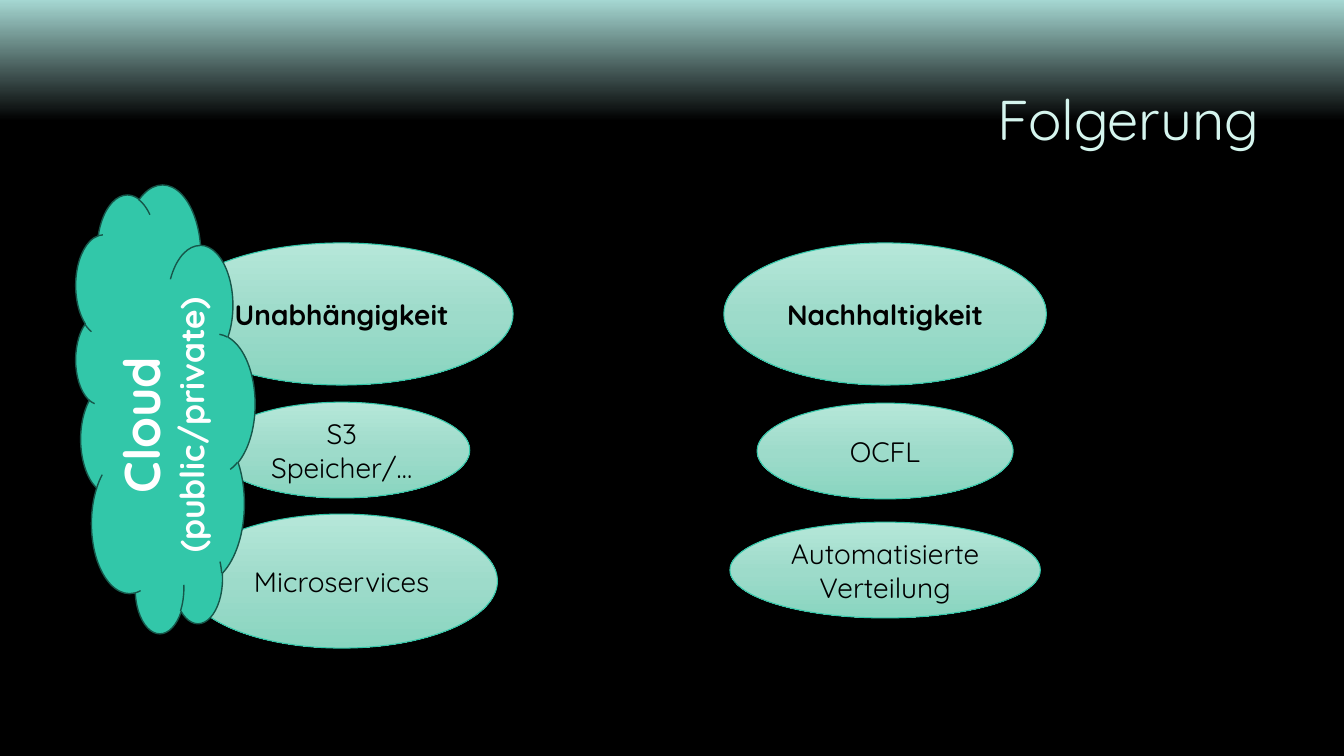
import copy
from dataclasses import dataclass

import pptx
import pptx.dml.color
import pptx.dml.fill
import pptx.enum.shapes
import pptx.enum.text
import pptx.shapes.autoshape
import pptx.slide
import pptx.text.text
import pptx.util

RGB = pptx.dml.color.RGBColor
KIND = pptx.enum.shapes.MSO_SHAPE
ALIGN = pptx.enum.text.PP_ALIGN

BLACK = RGB(0x00, 0x00, 0x00)
WHITE = RGB(0xFF, 0xFF, 0xFF)
MINT = RGB(0xD5, 0xF5, 0xEE)
TEAL = RGB(0x32, 0xC7, 0xA9)
PINE = RGB(0x16, 0x57, 0x4A)
SKY = RGB(0xA5, 0xD7, 0xD2)
PALE = RGB(0xB6, 0xE7, 0xD9)
SAGE = RGB(0x9D, 0xDB, 0xCA)
LEAF = RGB(0x89, 0xD5, 0xC0)

Stops = list[tuple[float, RGB]]
GLOW: Stops = [(0, SKY), (0.16, BLACK), (1, BLACK)]
SHEEN: Stops = [(0, PALE), (0.52, SAGE), (1, LEAF)]

WIDE = pptx.util.Inches(13.33)
HIGH = pptx.util.Inches(7.5)
COL = WIDE / 100
ROW = HIGH / 100
LEFT = 25.43
RIGHT = 65.86


@dataclass
class Box:
    mid: float
    top: float
    wide: float
    high: float


@dataclass
class Bubble:
    text: str
    box: Box
    bold: bool = False


TITLE = Box(59.11, 6.8, 70.66, 18.8)
CLOUD = Box(12.26, 42.27, 33.37, 23.73)
BUBBLES = [
    Bubble("Unabhängigkeit", Box(LEFT, 32.13, 25.5, 18.8), True),
    Bubble("Nachhaltigkeit", Box(RIGHT, 32.13, 24, 18.8), True),
    Bubble("S3 Speicher/…", Box(LEFT, 53.2, 19.05, 12.67)),
    Bubble("Microservices", Box(LEFT, 68, 23.18, 17.73)),
    Bubble("OCFL", Box(RIGHT, 53.33, 19.05, 12.67)),
    Bubble("Automatisierte Verteilung", Box(RIGHT, 69.07, 23.1, 12.67)),
]


def place(box: Box) -> dict[str, int]:
    return {
        "left": round((box.mid - box.wide / 2) * COL),
        "top": round(box.top * ROW),
        "width": round(box.wide * COL),
        "height": round(box.high * ROW),
    }


def apply(item: object, form: dict) -> None:
    for name, value in form.items():
        setattr(item, name, value)


def shade(fill: pptx.dml.fill.FillFormat, stops: Stops) -> None:
    fill.gradient()
    fill.gradient_angle = 270
    last = fill.gradient_stops[-1]._gs
    last.addnext(copy.deepcopy(last))
    for stop, (spot, tone) in zip(fill.gradient_stops, stops):
        stop.position = spot
        stop.color.rgb = tone


def write(para: pptx.text.text._Paragraph, text: str, size: int,
          tone: RGB, bold: bool = False) -> None:
    run = para.add_run()
    run.text = text
    apply(run.font, {"name": "Quicksand", "size": pptx.util.Pt(size), "bold": bold})
    run.font.color.rgb = tone


def draw(slide: pptx.slide.Slide, kind: KIND, box: Box, edge: RGB,
         width: float) -> pptx.shapes.autoshape.Shape:
    shape = slide.shapes.add_shape(kind, **place(box))
    shape.shadow.inherit = False
    shape.line.color.rgb = edge
    shape.line.width = pptx.util.Pt(width)
    apply(shape.text_frame, {
        "word_wrap": True,
        "vertical_anchor": pptx.enum.text.MSO_ANCHOR.MIDDLE,
    })
    shape.text_frame.paragraphs[0].alignment = ALIGN.CENTER
    return shape


def main() -> None:
    deck = pptx.Presentation()
    apply(deck, {"slide_width": WIDE, "slide_height": HIGH})
    slide = deck.slides.add_slide(deck.slide_layouts.get_by_name("Title Only"))
    shade(slide.background.fill, GLOW)

    title = slide.shapes.title
    apply(title, place(TITLE))
    title.text_frame.vertical_anchor = pptx.enum.text.MSO_ANCHOR.MIDDLE
    para = title.text_frame.paragraphs[0]
    apply(para, {"alignment": ALIGN.RIGHT, "line_spacing": 0.9})
    write(para, "Folgerung", 40, MINT)

    for bubble in BUBBLES:
        shape = draw(slide, KIND.OVAL, bubble.box, TEAL, 0.75)
        shade(shape.fill, SHEEN)
        write(shape.text_frame.paragraphs[0], bubble.text, 20, BLACK, bubble.bold)

    cloud = draw(slide, KIND.CLOUD, CLOUD, PINE, 1)
    cloud.rotation = 270
    cloud.fill.solid()
    cloud.fill.fore_color.rgb = TEAL
    for text, size in [("Cloud ", 36), ("(public/private)", 24)]:
        write(cloud.text_frame.paragraphs[0], text, size, WHITE, True)

    deck.save("out.pptx")


if __name__ == "__main__":
    main()
